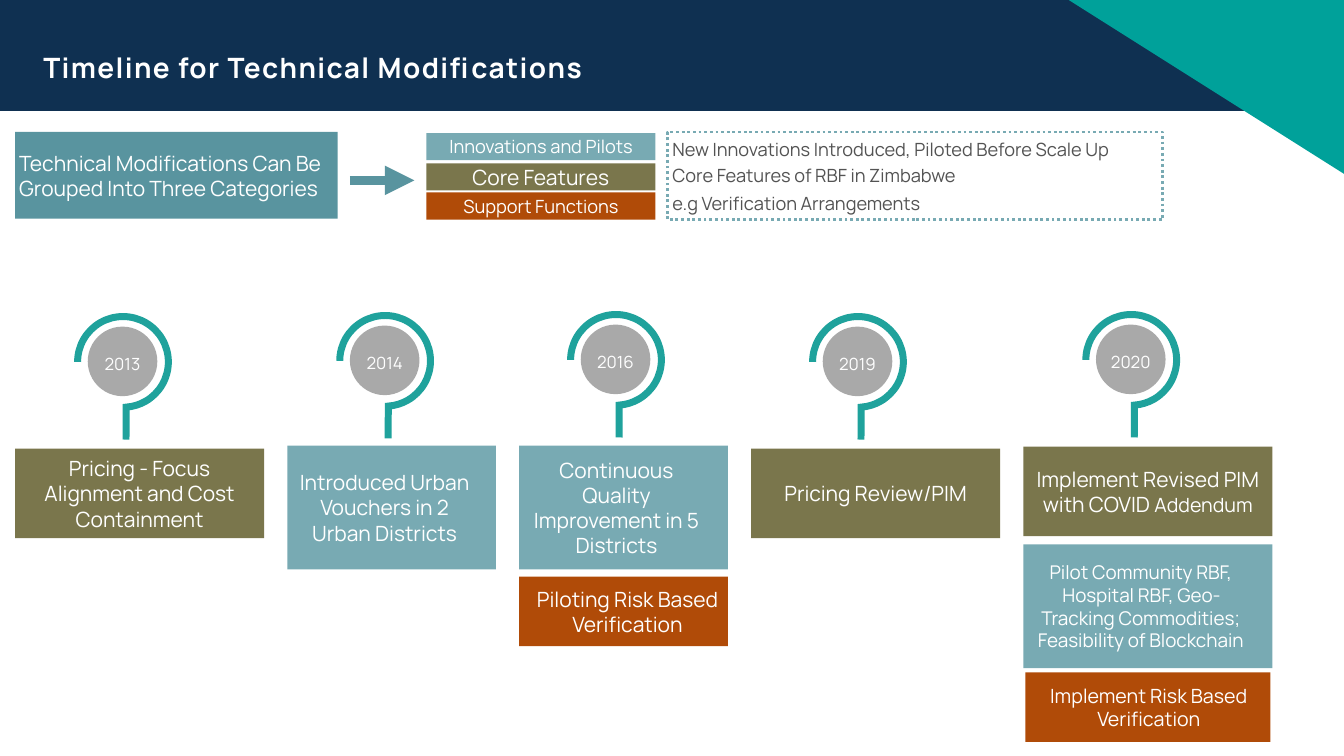
import pptx
import pptx.dml.color
import pptx.enum.dml
import pptx.enum.shapes
import pptx.enum.text
import pptx.oxml
import pptx.oxml.ns
import pptx.util

PX = 9144
DEGREE = 60000
FONT = "Manrope"
NAVY, TEAL, RING, GREY = "0F3051", "00A19A", "1FA29C", "A9A9A9"
PILOT, CORE, SUPPORT = "78AAB3", "7A764C", "B04B08"
SLATE, INK, WHITE = "59949F", "535353", "FFFFFF"
RADIUS = 45
SHAPES = pptx.enum.shapes.MSO_SHAPE
ALIGN = pptx.enum.text.PP_ALIGN
ANCHOR = pptx.enum.text.MSO_ANCHOR

CATEGORIES = [
    ("Innovations and Pilots", 13, PILOT, 137, "New Innovations Introduced, Piloted Before Scale Up"),
    ("Core Features", 15, CORE, 163, "Core Features of RBF in Zimbabwe"),
    ("Support Functions", 13, SUPPORT, 191, "e.g Verification Arrangements"),
]

MILESTONES = [
    ("2013", 122, 314, [
        ("Pricing - Focus Alignment and Cost Containment", 15, 445, 247, 89, CORE, 15, 4, 4)]),
    ("2014", 382, 313, [
        ("Introduced Urban Vouchers in 2 Urban Districts", 285, 442, 207, 123, PILOT, 15, 4, 18)]),
    ("2016", 611, 312, [
        ("Continuous Quality Improvement in 5 Districts", 515, 442, 207, 123, PILOT, 15, 4, 18),
        ("Piloting Risk Based Verification", 515, 572, 207, 69, SUPPORT, 15, 11, 3)]),
    ("2019", 851, 314, [
        ("Pricing Review/PIM", 745, 445, 247, 89, CORE, 15, 4, 4)]),
    ("2020", 1122, 312, [
        ("Implement Revised PIM with COVID ", 1015, 443, 247, 89, CORE, 15, 4, 4, "Addendum"),
        ("Pilot Community RBF, Hospital RBF, Geo-Tracking Commodities; Feasibility of Blockchain",
         1015, 540, 247, 123, PILOT, 13.5, 7, 21),
        ("Implement Risk Based Verification", 1017, 667, 243, 69, SUPPORT, 14, 4, 2)]),
]


def px(*lengths):
    """Turn px lengths into EMU."""
    return [length * PX for length in lengths]


def color(code):
    """Turn a hex string into a colour."""
    return pptx.dml.color.RGBColor.from_string(code)


def drawing(tag, attributes=""):
    """Make an empty DrawingML element."""
    return pptx.oxml.parse_xml(f'<a:{tag} {pptx.oxml.ns.nsdecls("a")} {attributes}/>')


def write_text(shape, text, size=15, fill=WHITE, bold=False, align=ALIGN.CENTER,
               anchor=ANCHOR.MIDDLE, insets=(4, 0, 4, 0)):
    """Add a formatted run to the first paragraph of a shape."""
    frame = shape.text_frame
    frame.word_wrap = True
    frame.vertical_anchor = anchor
    frame.margin_left, frame.margin_top, frame.margin_right, frame.margin_bottom = px(*insets)
    paragraph = frame.paragraphs[0]
    paragraph.alignment = align
    run = paragraph.add_run()
    run.text = text
    run.font.name = FONT
    run.font.size = pptx.util.Pt(size)
    run.font.bold = bold
    run.font.color.rgb = color(fill)
    return paragraph


def add_block(slide, kind, left, top, width, height, fill):
    """Add a flat preset shape without an outline."""
    shape = slide.shapes.add_shape(kind, *px(left, top, width, height))
    shape.shadow.inherit = False
    shape.fill.solid()
    shape.fill.fore_color.rgb = color(fill)
    shape.line.fill.background()
    return shape


def add_header(slide):
    """Add the band, its corner and the title."""
    add_block(slide, SHAPES.RECTANGLE, 0, 0, 1333, 110, NAVY)
    corner = add_block(slide, SHAPES.ISOSCELES_TRIANGLE, 1060, 0, 277, 175, TEAL)
    corner.adjustments[0] = 0
    corner.rotation = 180
    title = slide.shapes.title
    title.left, title.top, title.width, title.height = px(43, 49, 1010, 34)
    write_text(title, "Timeline for Technical Modifications", size=20, bold=True, align=ALIGN.LEFT,
               anchor=ANCHOR.BOTTOM, insets=(0, 0, 0, 0))
    for properties in title.element.iter(pptx.oxml.ns.qn("a:rPr")):
        properties.set("spc", "100")
    title.element.getparent().append(title.element)


def add_arrow(slide, start, end, y):
    """Add the thick horizontal arrow."""
    arrow = slide.shapes.add_connector(pptx.enum.shapes.MSO_CONNECTOR.STRAIGHT, *px(start, y, end, y))
    arrow.line.width = pptx.util.Pt(7)
    arrow.line.color.rgb = color(SLATE)
    properties = arrow.element.spPr
    properties.find(pptx.oxml.ns.qn("a:ln")).append(drawing("tailEnd", 'type="triangle"'))
    properties.append(drawing("effectLst"))


def add_legend(slide):
    """Add the three categories with their descriptions."""
    intro = add_block(slide, SHAPES.RECTANGLE, 15, 131, 320, 86, SLATE)
    write_text(intro, "Technical Modifications Can Be Grouped Into Three Categories", align=ALIGN.LEFT)
    frame = add_block(slide, SHAPES.RECTANGLE, 662, 131, 491, 87, WHITE)
    frame.line.color.rgb = color(PILOT)
    frame.line.width = pptx.util.Pt(2)
    frame.line.dash_style = pptx.enum.dml.MSO_LINE.ROUND_DOT
    for row, (name, size, fill, top, description) in enumerate(CATEGORIES):
        bar = add_block(slide, SHAPES.RECTANGLE, 423, 132 + round(29.5 * row), 227, 27, fill)
        write_text(bar, name, size=size)
        label = slide.shapes.add_textbox(*px(667, top, 480, 22))
        write_text(label, description, size=13, fill=INK, align=ALIGN.LEFT,
                   anchor=ANCHOR.TOP, insets=(0, 0, 0, 0))
    add_arrow(slide, 347, 411, 179)


def add_ring(slide, center, top):
    """Add an open ring that ends in a stem."""
    middle, bottom = top + RADIUS, top + 2 * RADIUS
    builder = slide.shapes.build_freeform(*px(center - RADIUS, middle))
    corners = [(center, top), (center + RADIUS, middle), (center + 3, bottom), (center + 3, top + 122)]
    builder.add_line_segments([px(*corner) for corner in corners], close=False)
    ring = builder.convert_to_shape()
    ring.shadow.inherit = False
    ring.fill.background()
    ring.line.color.rgb = color(RING)
    ring.line.width = pptx.util.Pt(5)
    ring.element.spPr.find(pptx.oxml.ns.qn("a:ln")).append(drawing("miter", 'lim="800000"'))
    top_line, right_line, bottom_line, _ = list(ring.element.iter(pptx.oxml.ns.qn("a:lnTo")))
    outline = top_line.getparent()
    radius = RADIUS * PX
    outline.replace(top_line, drawing(
        "arcTo", f'wR="{radius}" hR="{radius}" stAng="{180 * DEGREE}" swAng="{266 * DEGREE}"'))
    outline.remove(right_line)
    outline.remove(bottom_line)


def add_marker(slide, year, center, top):
    """Add a year in a disc inside its ring."""
    add_ring(slide, center, top)
    disc = add_block(slide, SHAPES.OVAL, center - 35, top + 10, 69, 69, GREY)
    paragraph = write_text(disc, year, size=12, insets=(2, 2, 2, 2))
    paragraph.line_spacing = 1.2
    paragraph.space_before = pptx.util.Pt(5)


def add_card(slide, text, left, top, width, height, fill, size, inset_left, inset_right, ending=""):
    """Add a coloured card with its text and an optional smaller ending."""
    card = add_block(slide, SHAPES.RECTANGLE, left, top, width, height, fill)
    insets = (inset_left, 0, inset_right, 0)
    write_text(card, text, size=size, insets=insets)
    if ending:
        write_text(card, ending, size=14, insets=insets)


def main():
    """Build the slide and save it."""
    presentation = pptx.Presentation()
    presentation.slide_width, presentation.slide_height = px(1333, 750)
    slide = presentation.slides.add_slide(presentation.slide_layouts[5])
    add_header(slide)
    for year, center, top, cards in MILESTONES:
        add_marker(slide, year, center, top)
        for card in cards:
            add_card(slide, *card)
    add_legend(slide)
    presentation.save("out.pptx")


if __name__ == "__main__":
    main()
